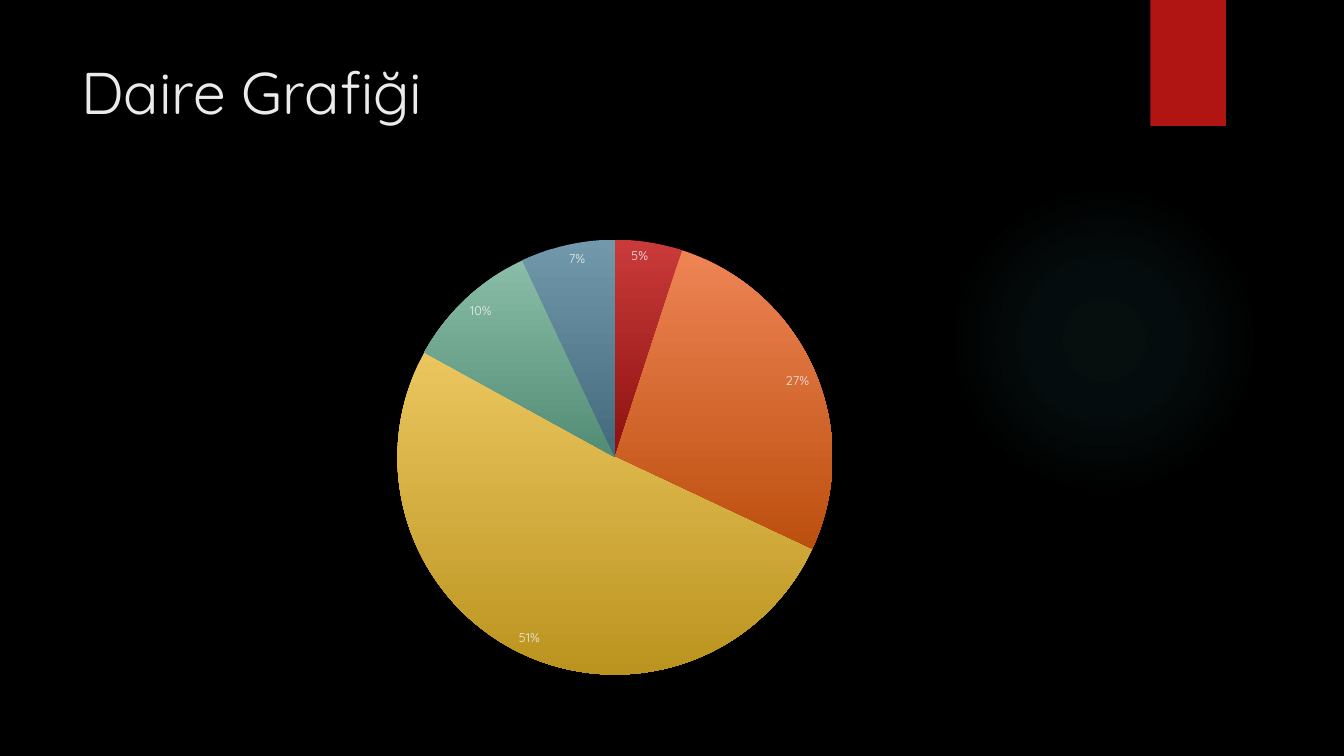
from lxml import etree
from pptx import Presentation
from pptx.chart.data import CategoryChartData
from pptx.dml.color import RGBColor
from pptx.enum.chart import XL_CHART_TYPE, XL_LABEL_POSITION
from pptx.enum.shapes import MSO_SHAPE
from pptx.enum.text import MSO_ANCHOR
from pptx.oxml import parse_xml
from pptx.oxml.ns import nsdecls, qn
from pptx.util import Inches, Pt

FONT = "Quicksand"
BLACK = RGBColor(0x00, 0x00, 0x00)
WHITE = RGBColor(0xFF, 0xFF, 0xFF)
LIGHT = RGBColor(0xEB, 0xEB, 0xEB)
RED = RGBColor(0xB0, 0x15, 0x13)
TEAL = RGBColor(0x50, 0xB9, 0xC1)
GLOW_STOPS = [(0, 7), (36, 6), (69, 0)]  # position %, opacity %

# Value, top colour and bottom colour of each slice
SLICES = [
    (5, RGBColor(0xC9, 0x3B, 0x3A), RGBColor(0x8D, 0x11, 0x0F)),
    (27, RGBColor(0xEE, 0x84, 0x55), RGBColor(0xBC, 0x4F, 0x0E)),
    (51, RGBColor(0xEB, 0xC6, 0x5F), RGBColor(0xBB, 0x94, 0x1F)),
    (10, RGBColor(0x89, 0xBD, 0xA7), RGBColor(0x53, 0x8C, 0x74)),
    (7, RGBColor(0x71, 0x98, 0xAB), RGBColor(0x43, 0x6A, 0x7C)),
]


def set_font(font, size, color):
    font.name = FONT
    font.size = Pt(size)
    font.color.rgb = color


def add_plain_shape(s, kind, x, y, w, h):
    sp = s.shapes.add_shape(kind, Inches(x), Inches(y), Inches(w), Inches(h))
    sp.shadow.inherit = False
    sp.line.fill.background()
    return sp


def add_glow(s, x, y, size):
    sp = add_plain_shape(s, MSO_SHAPE.OVAL, x, y, size, size)
    stops = "".join(
        f'<a:gs pos="{pos * 1000}"><a:srgbClr val="{TEAL}">'
        f'<a:alpha val="{alpha * 1000}"/></a:srgbClr></a:gs>'
        for pos, alpha in GLOW_STOPS)
    fill = parse_xml(
        f'<a:gradFill {nsdecls("a")} rotWithShape="1"><a:gsLst>{stops}</a:gsLst>'
        '<a:path path="circle">'
        '<a:fillToRect l="50000" t="50000" r="50000" b="50000"/>'
        '</a:path></a:gradFill>')
    sp._element.spPr.find(qn("a:prstGeom")).addnext(fill)


def add_ribbon(s, x, y, w, h):
    sp = add_plain_shape(s, MSO_SHAPE.RECTANGLE, x, y, w, h)
    sp.fill.solid()
    sp.fill.fore_color.rgb = RED
    # Soft shadow below
    effects = sp._element.spPr.find(qn("a:effectLst"))
    shadow = etree.SubElement(effects, qn("a:outerShdw"), blurRad=str(Pt(3)),
                              dist=str(Pt(2)), dir="5400000", rotWithShape="0")
    color = etree.SubElement(shadow, qn("a:srgbClr"), val=str(BLACK))
    etree.SubElement(color, qn("a:alpha"), val="45000")


def add_title(s, text, x, y, w, h):
    tf = s.shapes.add_textbox(Inches(x), Inches(y), Inches(w), Inches(h)).text_frame
    tf.word_wrap = True
    tf.vertical_anchor = MSO_ANCHOR.TOP
    r = tf.paragraphs[0].add_run()
    r.text = text
    set_font(r.font, 42, LIGHT)


def add_pie(s, x, y, w, h):
    data = CategoryChartData()
    data.categories = [str(i) for i in range(1, len(SLICES) + 1)]
    data.add_series("Series 1", [value for value, _, _ in SLICES])
    chart = s.shapes.add_chart(XL_CHART_TYPE.PIE, Inches(x), Inches(y),
                               Inches(w), Inches(h), data).chart
    chart.has_title = False
    chart.has_legend = False
    set_font(chart.font, 10, WHITE)
    plot = chart.plots[0]
    plot.vary_by_categories = True

    # Slices shaded from top to bottom
    for i, (_, top, bottom) in enumerate(SLICES):
        fmt = plot.series[0].points[i].format
        fmt.line.fill.background()
        fmt.fill.gradient()
        fmt.fill.gradient_angle = 270
        for stop, color in zip(fmt.fill.gradient_stops, (top, bottom)):
            stop.color.rgb = color

    # Percent labels
    labels = plot.series[0].data_labels
    labels.show_percentage = True
    labels.show_value = False
    labels.number_format = "0%"
    labels.number_format_is_linked = False
    labels.position = XL_LABEL_POSITION.INSIDE_END
    set_font(labels.font, 9, LIGHT)


def main():
    prs = Presentation()
    prs.slide_width = Inches(13.33)
    prs.slide_height = Inches(7.5)
    s = prs.slides.add_slide(prs.slide_layouts[6])
    s.background.fill.solid()
    s.background.fill.fore_color.rgb = BLACK

    add_glow(s, 9.41, 1.83, 3.08)
    add_ribbon(s, 11.41, 0, 0.75, 1.25)
    add_title(s, "Daire Grafiği", 0.71, 0.5, 10.29, 1.53)
    add_pie(s, 1.21, 2.24, 9.78, 4.59)
    prs.save("out.pptx")


if __name__ == "__main__":
    main()
